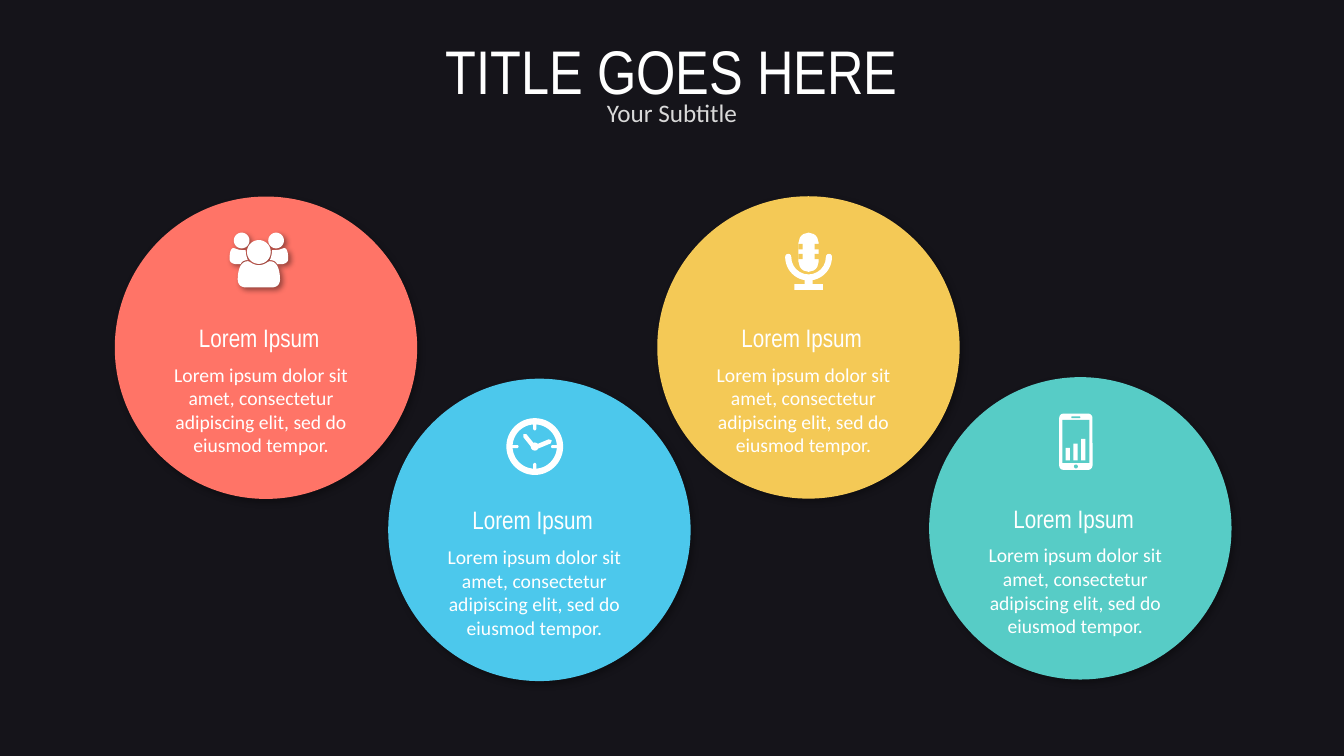
from dataclasses import dataclass

from lxml import etree
from pptx import Presentation
from pptx import util as u
from pptx.dml.color import RGBColor
from pptx.enum import shapes, text
from pptx.oxml import ns

Pt = u.Pt
KIND = shapes.MSO_SHAPE


@dataclass(frozen=True)
class Theme:
    night: str = "15141A"
    white: str = "FFFFFF"
    grey: str = "D9D9D9"
    coral: str = "FF7467"
    sky: str = "4CC8EC"
    gold: str = "F4C956"
    teal: str = "57CCC6"
    heading_font: str = "Arial Narrow"
    body_font: str = "Calibri"
    title_size: int = 44
    heading_size: int = 18
    body_size: int = 14


THEME = Theme()
DISC = 216


def paint(shape, colour):
    shape.fill.solid()
    shape.fill.fore_color.rgb = RGBColor.from_string(colour)
    shape.line.fill.background()
    shape.shadow.inherit = False
    return shape


def cast_shadow(shape, blur, distance, angle, opacity):
    effects = shape._element.spPr.find(ns.qn("a:effectLst"))
    shadow = etree.SubElement(
        effects, ns.qn("a:outerShdw"), blurRad=str(Pt(blur)), dist=str(Pt(distance)),
        dir=str(angle * 60000), algn="tl", rotWithShape="0")
    black = etree.SubElement(shadow, ns.qn("a:srgbClr"), val="000000")
    etree.SubElement(black, ns.qn("a:alpha"), val=str(opacity * 1000))


def add_part(slide, kind, corner, place, colour=THEME.white, adjust=()):
    """Add a preset shape; place is left, top, width, height from the corner."""
    left, top, width, height = place
    part = slide.shapes.add_shape(
        kind, Pt(corner[0] + left), Pt(corner[1] + top), Pt(width), Pt(height))
    for index, value in enumerate(adjust):
        part.adjustments[index] = value
    return paint(part, colour)


def add_outline(slide, corner, contours):
    """Add one white freeform made of closed contours measured from the corner."""
    placed = [[(Pt(corner[0] + x), Pt(corner[1] + y)) for x, y in contour]
              for contour in contours]
    builder = slide.shapes.build_freeform(*placed[0][0], scale=1.0)
    builder.add_line_segments(placed[0][1:], close=True)
    for contour in placed[1:]:
        builder.move_to(*contour[0])
        builder.add_line_segments(contour[1:], close=True)
    return paint(builder.convert_to_shape(), THEME.white)


def trace(start, *steps, samples=10):
    """Turn lines (one point) and Bezier curves (three points) into a contour."""
    points = [start]
    for step in steps:
        if len(step) == 1:
            points.append(step[0])
            continue
        corners = (points[-1], *step)
        for i in range(1, samples + 1):
            t = i / samples
            weights = ((1 - t) ** 3, 3 * t * (1 - t) ** 2, 3 * t * t * (1 - t), t ** 3)
            points.append(tuple(sum(w * c[axis] for w, c in zip(weights, corners))
                                for axis in (0, 1)))
    return points


def circle(x, y, r):
    k = 0.55 * r
    return trace((x + r, y),
                 ((x + r, y + k), (x + k, y + r), (x, y + r)),
                 ((x - k, y + r), (x - r, y + k), (x - r, y)),
                 ((x - r, y - k), (x - k, y - r), (x, y - r)),
                 ((x + k, y - r), (x + r, y - k), (x + r, y)))


def add_text(slide, words, place, *, size, font, colour=THEME.white):
    box = slide.shapes.add_textbox(*(Pt(length) for length in place))
    frame = box.text_frame
    frame.word_wrap = True
    frame.auto_size = text.MSO_AUTO_SIZE.SHAPE_TO_FIT_TEXT
    paragraph = frame.paragraphs[0]
    paragraph.alignment = text.PP_ALIGN.CENTER
    run = paragraph.add_run()
    run.text = words
    run.font.size = Pt(size)
    run.font.name = font
    run.font.color.rgb = RGBColor.from_string(colour)


def people_icon(slide, disc, colour):
    corner, middle = (disc[0] + 82, disc[1] + 26), 20.9

    def mirror(contour):
        return [(2 * middle - x, y) for x, y in contour]

    side_head = circle(8.6, 5.4, 5.6)
    side_body = trace((7.9, 22.3), ((5, 22.3),),
                      ((2.2, 22.3), (0, 20.9), (0, 18.7)),
                      ((0, 16.6), (0, 10.8), (2.9, 10.8)),
                      ((3.6, 10.8), (5.8, 12.2), (8.6, 12.2)),
                      ((11.5, 12.2),),
                      ((11.5, 15.1), (12.2, 17.3), (13, 19.4)),
                      ((10.8, 19.4), (8.6, 20.2), (7.9, 22.3)))
    half_body = trace((middle, 38.9), ((11.5, 38.9),),
                      ((8, 38.9), (5.8, 36.7), (5.8, 33.1)),
                      ((5.8, 28), (7.2, 20.2), (13, 20.2)),
                      ((14.4, 20.2), (16.6, 23), (middle, 23)))
    front_body = half_body + mirror(half_body)[::-1]
    people = add_outline(slide, corner, [
        side_body, side_head, front_body, circle(middle, 13.6, 8.5),
        mirror(side_head), mirror(side_body)])
    cast_shadow(people, blur=4, distance=3, angle=45, opacity=40)


def clock_icon(slide, disc, colour):
    corner = disc[0] + 84.4, disc[1] + 28.2
    add_part(slide, KIND.DONUT, corner, (0, 0, 40.6, 40.6), adjust=[0.11])
    add_part(slide, KIND.OVAL, corner, (17.4, 17.4, 5.8, 5.8))
    for near in (0.8, 31.9):
        for tick in ((19.2, near, 2.2, 7.9), (near, 19.2, 7.9, 2.2)):
            add_part(slide, KIND.ROUNDED_RECTANGLE, corner, tick, adjust=[0.5])
    hour_hand = [(20.2, 18.7), (18, 20.9), (12.2, 13.7), (12.2, 11.5), (14.4, 11.5)]
    minute_hand = [(23, 21.6), (21.6, 18.7), (30.2, 15.1), (32.4, 15.8), (31.7, 18)]
    for hand in (hour_hand, minute_hand):
        add_outline(slide, corner, [hand])


def microphone_icon(slide, disc, colour):
    corner = disc[0] + 91.4, disc[1] + 26
    add_part(slide, KIND.BLOCK_ARC, corner, (0, 0.8, 33.4, 33.4), adjust=[0, 108, 0.13])
    for tip in (0, 29.1):
        add_part(slide, KIND.ROUNDED_RECTANGLE, corner, (tip, 15.1, 4.3, 4.8), adjust=[0.5])
    add_part(slide, KIND.ROUNDED_RECTANGLE, corner, (9.5, 0, 14.4, 28), adjust=[0.5])
    for notch_left in (9.3, 21):
        for notch_top in (8.1, 15.1):
            add_part(slide, KIND.RECTANGLE, corner, (notch_left, notch_top, 3.1, 3.8), colour)
    add_part(slide, KIND.RECTANGLE, corner, (13.8, 33, 5.8, 5))
    add_part(slide, KIND.RECTANGLE, corner, (6.5, 36.8, 20.4, 4.2))


def phone_icon(slide, disc, colour):
    corner = disc[0] + 92.9, disc[1] + 26
    add_part(slide, KIND.ROUNDED_RECTANGLE, corner, (0, 0, 23.8, 40.3), adjust=[0.13])
    add_part(slide, KIND.RECTANGLE, corner, (2.3, 4.6, 19.2, 30.6), colour)
    add_part(slide, KIND.ROUNDED_RECTANGLE, corner, (8.6, 2, 6.5, 1.3), colour, adjust=[0.5])
    add_part(slide, KIND.OVAL, corner, (10.5, 36.4, 2.8, 2.8), colour)
    for index, height in enumerate((8.9, 12.1, 15.4)):
        add_part(slide, KIND.RECTANGLE, corner, (4.5 + 5.6 * index, 33.5 - height, 3.1, height))


def topic_disc(slide, disc, colour, draw_icon):
    left, top = disc
    backdrop = add_part(slide, KIND.OVAL, disc, (0, 0, DISC, DISC), colour)
    cast_shadow(backdrop, blur=4.5, distance=2.6, angle=53, opacity=30)
    draw_icon(slide, disc, colour)
    add_text(slide, "Lorem Ipsum", (left + 31.2, top + 86.4, 144, 28.8),
             size=THEME.heading_size, font=THEME.heading_font)
    add_text(slide, "Lorem ipsum dolor sit amet, consectetur adipiscing elit, "
             "sed do eiusmod tempor.", (left + 34, top + 115.2, 141, 75),
             size=THEME.body_size, font=THEME.body_font)


def heading(slide, left, top, width):
    add_text(slide, "TITLE GOES HERE", (left, top, width, 60.5),
             size=THEME.title_size, font=THEME.heading_font)
    add_text(slide, "Your Subtitle", (left + 54, top + 46, width - 108, 28.8),
             size=THEME.heading_size, font=THEME.body_font, colour=THEME.grey)


def main():
    deck = Presentation()
    deck.slide_width, deck.slide_height = Pt(960), Pt(540)
    slide = deck.slides.add_slide(deck.slide_layouts[6])
    slide.background.fill.solid()
    slide.background.fill.fore_color.rgb = RGBColor.from_string(THEME.night)
    heading(slide, 263, 20.2, 434)
    for disc, colour, draw_icon in (
            ((82, 140.4), THEME.coral, people_icon),
            ((277.3, 270.5), THEME.sky, clock_icon),
            ((469.5, 140.2), THEME.gold, microphone_icon),
            ((663.7, 269.4), THEME.teal, phone_icon)):
        topic_disc(slide, disc, colour, draw_icon)
    deck.save("out.pptx")


if __name__ == "__main__":
    main()
